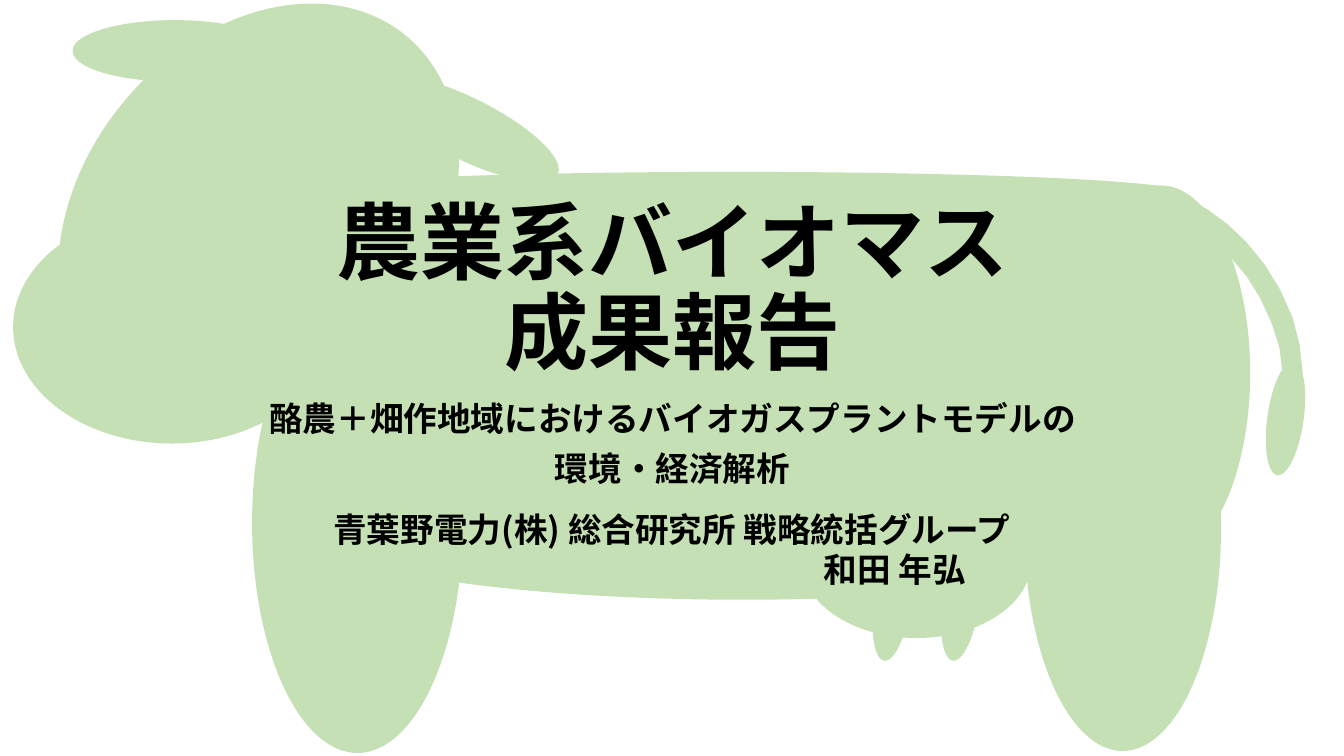
"""Build the biomass report title slide over a cow silhouette."""
from lxml.etree import SubElement
from pptx import Presentation
from pptx.dml.color import RGBColor
from pptx.enum.shapes import MSO_SHAPE as SHAPE
from pptx.enum.text import MSO_ANCHOR as ANCHOR, PP_ALIGN as ALIGN
from pptx.oxml.ns import qn
from pptx.util import Inches, Pt

PALE_GREEN = RGBColor(0xC5, 0xE0, 0xB4)
BLACK = RGBColor(0, 0, 0)
FONT = "Noto Sans CJK JP"

deck = Presentation()
deck.slide_width, deck.slide_height = Inches(13.33), Inches(7.5)
slide = deck.slides.add_slide(deck.slide_layouts[6])


def paint(part):
    part.shadow.inherit = False
    part.fill.solid()
    part.fill.fore_color.rgb = PALE_GREEN
    part.line.fill.background()


def write(text, box, size=24, anchor=ANCHOR.TOP, spacing=None, before=0, indents=()):
    frame = slide.shapes.add_textbox(*map(Inches, box)).text_frame
    frame.word_wrap = True
    frame.vertical_anchor = anchor
    frame.text = text
    for number, line in enumerate(frame.paragraphs):
        line.alignment = ALIGN.CENTER
        line.line_spacing = spacing
        line.space_before = Pt(before)
        if number < len(indents) and indents[number]:
            line.alignment = ALIGN.LEFT
            line._p.get_or_add_pPr().set("marL", str(Inches(indents[number])))
        for run in line.runs:
            run.font.name = FONT
            run.font.size = Pt(size)
            run.font.bold = True
            run.font.color.rgb = BLACK
            SubElement(run._r.get_or_add_rPr(), qn("a:ea")).set("typeface", FONT)


belly = (6.64, 0.83, 1.46, 8.78, 90)
muzzle = (0.13, 2.09, 3.15, 2.31, 0)
head = (0.82, -0.17, 3.49, 4.6, 39.4)
rump = (10.63, 1.84, 1.77, 3.72, 0)
front_leg = (2.5, 2.9, 2.09, 4.57, 0)
udder = (7.95, 4.8, 2.28, 1.53, 0)
ears = [(3.61, 0.97, 2.03, 0.61, 26.5), (0.72, 0.2, 2.03, 0.61, 0)]
hind_leg = (10.16, 3.05, 1.95, 4.4, 0)
tuft_and_teats = [(left, top, 0.36, 1.14, 8.1)
                  for left, top in [(12.57, 3.58), (9.35, 5.42), (8.67, 5.42)]]
back = (7.07, -2.55, 0.41, 8.92, 90)

for *box, angle in [belly, muzzle, head, rump, front_leg, udder, *ears,
                    hind_leg, *tuft_and_teats, back]:
    oval = slide.shapes.add_shape(SHAPE.OVAL, *map(Inches, box))
    oval.rotation = angle
    paint(oval)

trunk = slide.shapes.add_shape(SHAPE.ROUNDED_RECTANGLE, *map(Inches, (3.13, 2, 8.9, 3.76)))
paint(trunk)

tail_outer = [(1180, 198), (1198, 208), (1217, 222), (1236, 240), (1254, 262),
              (1270, 288), (1282, 315), (1289, 342), (1292, 370)]
tail_inner = [(1272, 370), (1269, 345), (1261, 320), (1250, 296),
              (1237, 275), (1222, 257), (1190, 240)]
outline = slide.shapes.build_freeform(*tail_outer[0], scale=Inches(0.01))
outline.add_line_segments(tail_outer[1:] + tail_inner)
paint(outline.convert_to_shape())

write("酪農＋畑作地域におけるバイオガスプラントモデルの\n環境・経済解析",
      (1.67, 3.94, 10, 1.81), spacing=0.9, before=10)
write("青葉野電力(株) 総合研究所 戦略統括グループ\n和田 年弘",
      (3, 5, 7.33, 0.91), indents=(0, 5.07))
write("農業系バイオマス\v成果報告", (1.67, 1.23, 10, 2.61), size=60,
      anchor=ANCHOR.BOTTOM, spacing=0.9)

deck.save("out.pptx")
